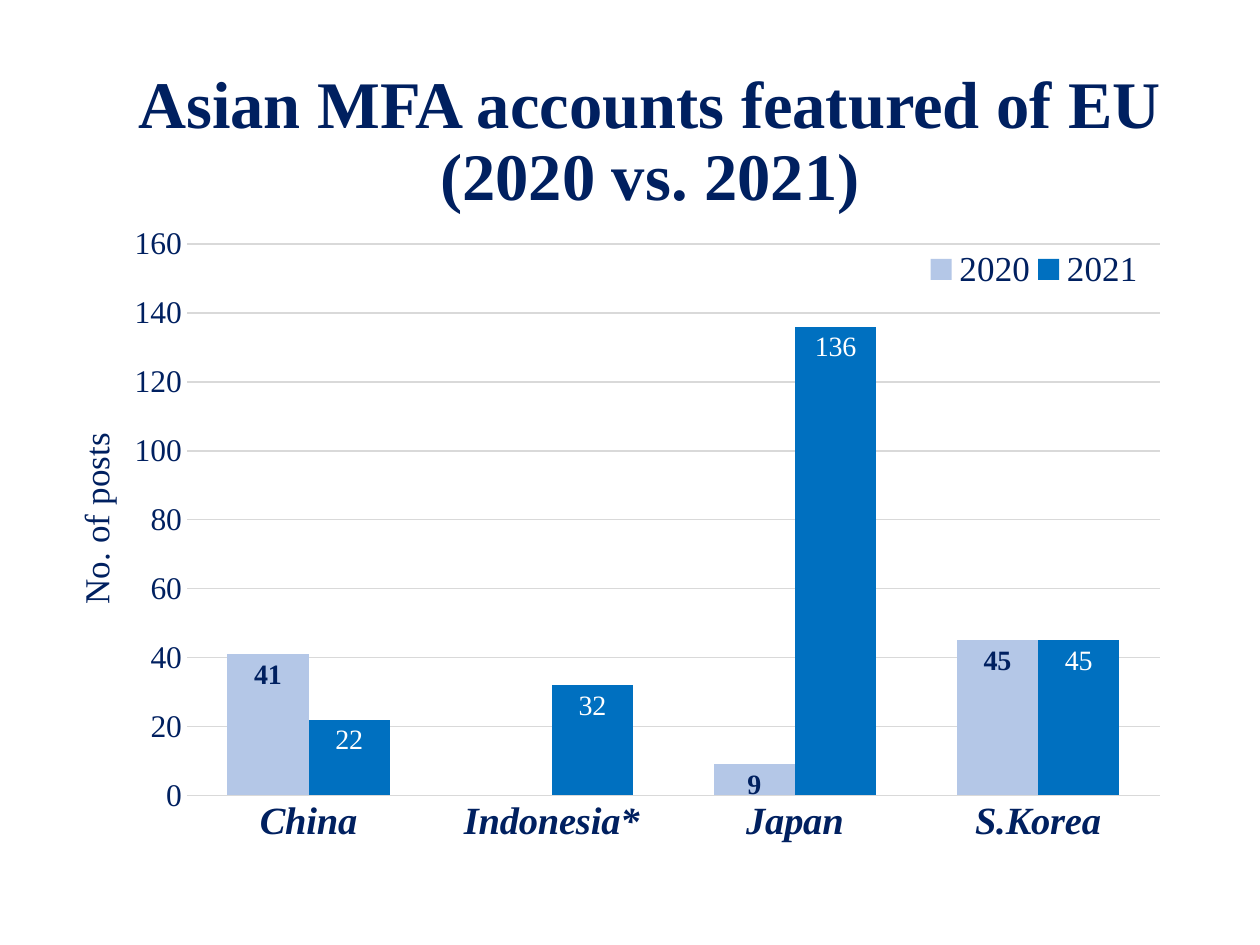
from pptx import Presentation
from pptx import util as u
from pptx.chart.data import CategoryChartData
from pptx.dml.color import RGBColor
from pptx.enum import chart as charts, text
from pptx.oxml import parse_xml
from pptx.oxml.ns import nsdecls, qn

PX = u.Inches(1) // 126
FONT = "Times New Roman"
COLORS = {
    "navy": "002060",
    "pale": "B4C7E7",
    "blue": "0070C0",
    "white": "FFFFFF",
    "grid": "D9D9D9",
}
CATEGORIES = ["China", "Indonesia*", "Japan", "S.Korea"]
SERIES = [
    ("2020", [41, None, 9, 45], "pale", "navy", True),
    ("2021", [22, 32, 136, 45], "blue", "white", False),
]


def color(name):
    return RGBColor.from_string(COLORS[name])


def style_font(font, size, name="navy", bold=False, italic=False):
    font.name = FONT
    font.size = u.Pt(size)
    font.bold = bold
    font.italic = italic
    font.color.rgb = color(name)


def style_line(line):
    line.color.rgb = color("grid")
    line.width = u.Pt(0.75)


def place(element, index, x, y, width=None, height=None, inner=False):
    for layout in element.findall(qn("c:layout")):
        element.remove(layout)
    target = '<c:layoutTarget val="inner"/>' if inner else ""
    modes = '<c:xMode val="edge"/><c:yMode val="edge"/>'
    sizes = zip("xywh", (x, y, width, height))
    values = "".join(f'<c:{key} val="{value}"/>' for key, value in sizes if value is not None)
    element.insert(index, parse_xml(
        f'<c:layout {nsdecls("c")}><c:manualLayout>{target}{modes}{values}'
        '</c:manualLayout></c:layout>'))


def add_title(slide):
    title = slide.shapes.title
    title.left, title.top, title.width, title.height = (
        value * PX for value in (44, 93, 1212, 100))
    frame = title.text_frame
    frame.text = "Asian MFA accounts featured of EU\v(2020 vs. 2021)"
    frame.word_wrap = True
    frame.auto_size = text.MSO_AUTO_SIZE.NONE
    frame.vertical_anchor = text.MSO_ANCHOR.MIDDLE
    paragraph = frame.paragraphs[0]
    paragraph.alignment = text.PP_ALIGN.CENTER
    paragraph.line_spacing = 0.9
    style_font(paragraph.font, 38, bold=True)


def style_axes(chart):
    category_axis = chart.category_axis
    category_axis.major_tick_mark = charts.XL_TICK_MARK.NONE
    style_font(category_axis.tick_labels.font, 22, bold=True, italic=True)
    style_line(category_axis.format.line)

    value_axis = chart.value_axis
    value_axis.minimum_scale = 0
    value_axis.maximum_scale = 160
    value_axis.major_unit = 20
    value_axis.major_tick_mark = charts.XL_TICK_MARK.NONE
    value_axis.format.line.fill.background()
    style_font(value_axis.tick_labels.font, 18)
    style_line(value_axis.major_gridlines.format.line)

    axis_title = value_axis.axis_title
    axis_title.text_frame.text = "No. of posts"
    style_font(axis_title.text_frame.paragraphs[0].font, 20)
    body = axis_title.text_frame._txBody.find(qn("a:bodyPr"))
    body.set("rot", "-5400000")
    body.set("vert", "horz")
    place(axis_title._element, 1, 0.02, 0.31)


def style_series(plot):
    plot.gap_width = 99
    plot.overlap = 0
    plot.vary_by_categories = False
    for series, (_, _, fill, label_color, bold) in zip(plot.series, SERIES):
        series.format.fill.solid()
        series.format.fill.fore_color.rgb = color(fill)
        labels = series.data_labels
        labels.show_value = True
        labels.position = charts.XL_LABEL_POSITION.INSIDE_END
        style_font(labels.font, 16, label_color, bold)


def style_legend(chart):
    chart.has_legend = True
    legend = chart.legend
    legend.position = charts.XL_LEGEND_POSITION.TOP
    legend.include_in_layout = False
    style_font(legend.font, 20)
    place(legend._element, 1, 0.75, 0.05, 0.19, 0.07)


def add_posts_chart(slide):
    data = CategoryChartData()
    data.categories = CATEGORIES
    for name, values, *_ in SERIES:
        data.add_series(name, values)
    box = (value * PX for value in (44, 210, 1172, 698))
    chart = slide.shapes.add_chart(
        charts.XL_CHART_TYPE.COLUMN_CLUSTERED, *box, data).chart
    chart.has_title = False
    style_font(chart.font, 16)
    style_axes(chart)
    style_series(chart.plots[0])
    style_legend(chart)
    plot_area = chart._chartSpace.find(qn("c:chart")).find(qn("c:plotArea"))
    place(plot_area, 0, 0.122, 0.049, 0.83, 0.79, inner=True)


def main():
    presentation = Presentation()
    presentation.slide_width = 1260 * PX
    presentation.slide_height = 945 * PX
    slide = presentation.slides.add_slide(presentation.slide_layouts[5])
    add_title(slide)
    add_posts_chart(slide)
    presentation.save("out.pptx")


if __name__ == "__main__":
    main()
